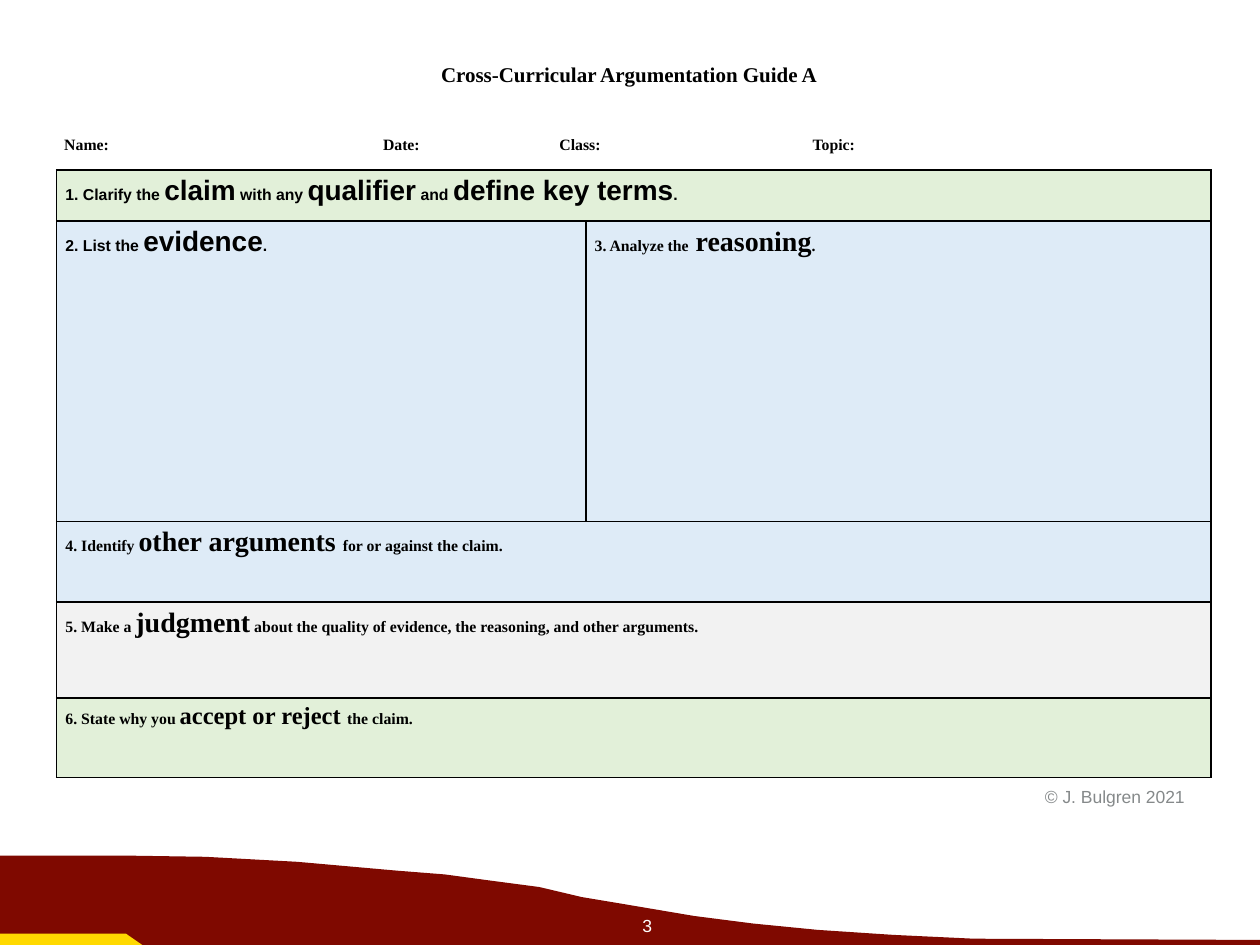
import pptx
import pptx.dml.color
import pptx.enum.text
import pptx.oxml
import pptx.oxml.ns
import pptx.util
from dataclasses import dataclass

ALIGN = pptx.enum.text.PP_ALIGN
ANCHOR = pptx.enum.text.MSO_ANCHOR


@dataclass(frozen=True)
class Theme:
    serif: str = "Times New Roman"
    sans: str = "Arial"
    ink: str = "000000"
    white: str = "FFFFFF"
    gray: str = "85898A"
    green: str = "E2F0D9"
    blue: str = "DEEBF7"
    pale: str = "F2F2F2"
    maroon: str = "7F0900"
    gold: str = "FFD900"
    title: int = 12
    label: int = 9
    key: int = 16
    small_key: int = 14
    footer: int = 10
    rule: int = 1


THEME = Theme()

prs = pptx.Presentation()
prs.slide_width = pptx.util.Inches(10)
prs.slide_height = pptx.util.Inches(7.5)
COL = prs.slide_width / 100  # the slide is a grid of 100 columns by 75 rows
ROW = prs.slide_height / 75


def cols(n):
    return pptx.util.Emu(round(n * COL))


def rows(n):
    return pptx.util.Emu(round(n * ROW))


def to_emu(box):
    left, top, width, height = box
    return cols(left), rows(top), cols(width), rows(height)


def rgb(value):
    return pptx.dml.color.RGBColor.from_string(value)


def write(tf, text, font=THEME.serif, size=THEME.label, key_size=THEME.key,
          color=THEME.ink, bold=True, align=ALIGN.LEFT, anchor=ANCHOR.TOP):
    """Fill tf with one paragraph; words between asterisks take key_size."""
    tf.word_wrap = True
    tf.vertical_anchor = anchor
    p = tf.paragraphs[0]
    p.alignment = align
    for i, part in enumerate(text.split("*")):
        if part:
            r = p.add_run()
            r.text = part
            r.font.name = font
            r.font.size = pptx.util.Pt(key_size if i % 2 else size)
            r.font.bold = bold
            r.font.color.rgb = rgb(color)


def write_cell(cell, text, margin=0.8, **fmt):
    cell.margin_left, cell.margin_right = cols(margin), cols(0.7)
    cell.margin_top = cell.margin_bottom = rows(0.4)
    write(cell.text_frame, text, **fmt)


def add_plain_table(s, box, widths, heights):
    table = s.shapes.add_table(len(heights), len(widths), *to_emu(box)).table
    table.first_row = table.horz_banding = False
    for column, width in zip(table.columns, widths):
        column.width = cols(width)
    for row, height in zip(table.rows, heights):
        row.height = rows(height)
    return table


def add_borders(cell):
    tc_pr = cell._tc.get_or_add_tcPr()
    for i, side in enumerate("LRTB"):
        tc_pr.insert(i, pptx.oxml.parse_xml(
            f'<a:ln{side} {pptx.oxml.ns.nsdecls("a")} w="{pptx.util.Pt(THEME.rule)}">'
            f'<a:solidFill><a:srgbClr val="{THEME.ink}"/></a:solidFill></a:ln{side}>'))


def add_outline(s, points, color):
    start, *rest = [(cols(x), rows(y)) for x, y in points]
    builder = s.shapes.build_freeform(*start)
    builder.add_line_segments(rest, close=True)
    sp = builder.convert_to_shape()
    sp.shadow.inherit = False
    sp.fill.solid()
    sp.fill.fore_color.rgb = rgb(color)
    sp.line.fill.background()


def add_text(s, box, text, **fmt):
    write(s.shapes.add_textbox(*to_emu(box)).text_frame, text, **fmt)


def add_wave(s, box):
    left, top, width, height = box
    right, bottom = left + width, top + height
    crest = [(0, 0), (9.8, 0), (16.3, 0.1), (23.6, 0.5), (31.5, 1.2), (35.3, 1.5),
             (39, 2), (42.8, 2.5), (46.2, 3.3), (48.6, 3.7), (55.1, 4.8),
             (59.8, 5.4), (64.9, 5.9), (70.9, 6.3), (77.3, 6.6), (100, 6.7)]
    add_outline(s, [(left + x, top + y) for x, y in crest]
                + [(right, bottom), (left, bottom)], THEME.maroon)
    add_outline(s, [(left, bottom - 0.9), (left + 10, bottom - 0.9),
                    (left + 11.3, bottom), (left, bottom)], THEME.gold)


def add_title(s, box, text):
    sp = s.shapes.title
    sp.left, sp.top, sp.width, sp.height = to_emu(box)
    write(sp.text_frame, text, size=THEME.title, align=ALIGN.CENTER)


def add_student_fields(s, box):
    fields = [("Name:", 25.3, 0.8), ("Date:", 11.8, 0.8),
              ("Class:", 15.1, 3), ("Topic:", 40.8, 8)]
    table = add_plain_table(s, box, [width for _, width, _ in fields], [box[3]])
    for cell, (text, _, margin) in zip(table.rows[0].cells, fields):
        write_cell(cell, text, margin)
        cell.fill.background()


def add_guide(s, box):
    sans = {"font": THEME.sans}
    steps = [
        (4.05, THEME.green,
         [("1. Clarify the *claim* with any *qualifier* and *define key terms*.", sans)]),
        (23.85, THEME.blue, [("2. List the *evidence*.", sans),
                             ("3. Analyze the* reasoning*.", {})]),
        (6.4, THEME.blue,
         [("4. Identify *other arguments *for or against the claim.", {})]),
        (7.6, THEME.pale,
         [("5. Make a *judgment* about the quality of evidence, "
           "the reasoning, and other arguments.", {})]),
        (6.3, THEME.green, [("6. State why you *accept or reject *the claim.",
                             {"key_size": THEME.small_key})]),
    ]
    split = 42
    table = add_plain_table(s, box, [split, box[2] - split],
                            [height for height, _, _ in steps])
    for row, (_, fill, prompts) in zip(table.rows, steps):
        cells = list(row.cells)
        if len(prompts) == 1:
            cells[0].merge(cells[1])
        for cell in cells:
            cell.fill.solid()
            cell.fill.fore_color.rgb = rgb(fill)
            add_borders(cell)
        for cell, (text, fmt) in zip(cells, prompts):
            write_cell(cell, text, 0.7, **fmt)


def add_footer(s, credit_box, number_box):
    fmt = {"font": THEME.sans, "size": THEME.footer, "bold": False}
    add_text(s, credit_box, "© J. Bulgren 2021", color=THEME.gray,
             align=ALIGN.RIGHT, anchor=ANCHOR.MIDDLE, **fmt)
    add_text(s, number_box, "3", color=THEME.white, **fmt)


def main():
    s = prs.slides.add_slide(prs.slide_layouts[5])
    add_wave(s, (0, 67.9, 100, 7.1))
    add_title(s, (14.1, 4.4, 71.7, 5), "Cross-Curricular Argumentation Guide A")
    add_student_fields(s, (4.3, 10.4, 93, 2.2))
    add_guide(s, (4.5, 13.5, 91.6, 48.2))
    add_footer(s, (81.2, 61.7, 13.8, 3), (50, 72.1, 7.3, 3.3))
    prs.save("out.pptx")


if __name__ == "__main__":
    main()
